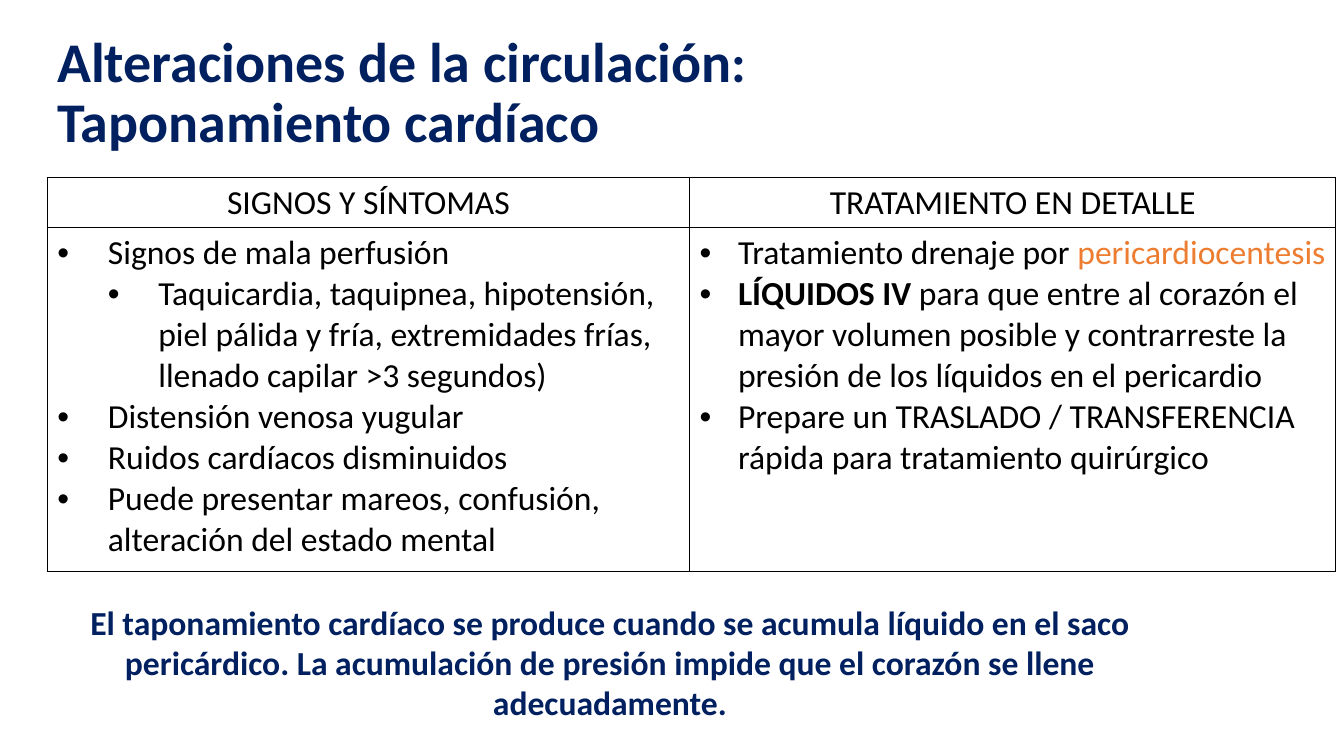
from lxml import etree
from pptx import Presentation
from pptx.dml.color import RGBColor
from pptx.enum.text import MSO_ANCHOR as Anchor, PP_ALIGN as Align
from pptx.oxml.ns import qn
from pptx.util import Inches, Pt

NAVY = RGBColor(0x00, 0x20, 0x60)
BLACK = RGBColor(0x00, 0x00, 0x00)
ORANGE = RGBColor(0xED, 0x7D, 0x31)
WHITE = RGBColor(0xFF, 0xFF, 0xFF)
FONT = "Calibri"

LEFT = 0.47                # shared by the title and the table
COLUMNS = (6.37, 6.41)
ROWS = (0.5, 3.41)

# Each item: level, then runs of (text, colour, bold)
SIGNS = [
    (0, [("Signos de mala perfusión", BLACK, False)]),
    (1, [("Taquicardia, taquipnea, hipotensión, piel pálida y fría, "
          "extremidades frías, llenado capilar >3 segundos) ", BLACK, False)]),
    (0, [("Distensión venosa yugular", BLACK, False)]),
    (0, [("Ruidos cardíacos disminuidos", BLACK, False)]),
    (0, [("Puede presentar mareos, confusión, alteración del estado mental", BLACK, False)]),
]
TREATMENT = [
    (0, [("Tratamiento drenaje por ", BLACK, False), ("pericardiocentesis", ORANGE, False)]),
    (0, [("LÍQUIDOS IV ", BLACK, True),
         ("para que entre al corazón el mayor volumen posible y contrarreste la "
          "presión de los líquidos en el pericardio", BLACK, False)]),
    (0, [("Prepare un TRASLADO / TRANSFERENCIA rápida para tratamiento quirúrgico",
          BLACK, False)]),
]
EXPLANATION = ("El taponamiento cardíaco se produce cuando se acumula líquido en el saco "
               "pericárdico. La acumulación de presión impide que el corazón se llene "
               "adecuadamente.")


def add_run(paragraph, text, colour, bold=False, size=24):
    run = paragraph.add_run()
    run.text = text
    run.font.name, run.font.size, run.font.bold = FONT, Pt(size), bold
    run.font.color.rgb = colour


def add_text(slide, left, top, width, height, runs, align, anchor, spacing=1.0):
    """Text box with one paragraph of (text, size) runs in bold navy."""
    frame = slide.shapes.add_textbox(*map(Inches, (left, top, width, height))).text_frame
    frame.word_wrap = True
    frame.vertical_anchor = anchor
    paragraph = frame.paragraphs[0]
    paragraph.alignment, paragraph.line_spacing = align, spacing
    for text, size in runs:
        add_run(paragraph, text, NAVY, True, size)


def style_cell(cell):
    """Black 1 pt border on every side, white fill."""
    properties = cell._tc.get_or_add_tcPr()
    for side in ("lnL", "lnR", "lnT", "lnB"):
        line = etree.SubElement(properties, qn(f"a:{side}"), w=str(Pt(1)))
        fill = etree.SubElement(line, qn("a:solidFill"))
        etree.SubElement(fill, qn("a:srgbClr"), val=str(BLACK))
    cell.fill.solid()
    cell.fill.fore_color.rgb = WHITE


def fill_heading(cell, text):
    paragraph = cell.text_frame.paragraphs[0]
    paragraph.alignment = Align.CENTER
    add_run(paragraph, text, BLACK)


def fill_bullets(cell, items, indent):
    frame = cell.text_frame
    for index, (level, runs) in enumerate(items):
        paragraph = frame.add_paragraph() if index else frame.paragraphs[0]
        paragraph.level = level
        properties = paragraph._p.get_or_add_pPr()
        properties.set("marL", str(Inches(indent * (level + 1))))
        properties.set("indent", str(-Inches(indent)))
        etree.SubElement(properties, qn("a:buFont"), typeface="Arial")
        etree.SubElement(properties, qn("a:buChar"), char="•")
        for text, colour, bold in runs:
            add_run(paragraph, text, colour, bold)


def add_findings_table(slide):
    table = slide.shapes.add_table(
        len(ROWS), len(COLUMNS), Inches(LEFT), Inches(1.76),
        Inches(sum(COLUMNS)), Inches(sum(ROWS))).table
    table.first_row = table.horz_banding = False
    for column, width in zip(table.columns, COLUMNS):
        column.width = Inches(width)
    for row, height in zip(table.rows, ROWS):
        row.height = Inches(height)
    for cell in table.iter_cells():
        style_cell(cell)

    contents = (("SIGNOS Y SÍNTOMAS", SIGNS, 0.5),
                ("TRATAMIENTO EN DETALLE", TREATMENT, 0.38))
    for column, (heading, items, indent) in enumerate(contents):
        fill_heading(table.cell(0, column), heading)
        fill_bullets(table.cell(1, column), items, indent)


def main():
    deck = Presentation()
    deck.slide_width, deck.slide_height = Inches(13.33), Inches(7.5)
    slide = deck.slides.add_slide(deck.slide_layouts[6])

    # Title
    add_text(slide, LEFT, 0.21, 10.28, 1.45,
             [("Alteraciones de la circulación", 40), (": ", 38), ("Taponamiento cardíaco", 40)],
             Align.LEFT, Anchor.MIDDLE, 0.9)
    # Signs and treatment
    add_findings_table(slide)
    # Explanation below the table
    add_text(slide, 0.33, 5.92, 11.44, 1.31, [(EXPLANATION, 24)], Align.CENTER, Anchor.TOP)

    deck.save("out.pptx")


if __name__ == "__main__":
    main()
